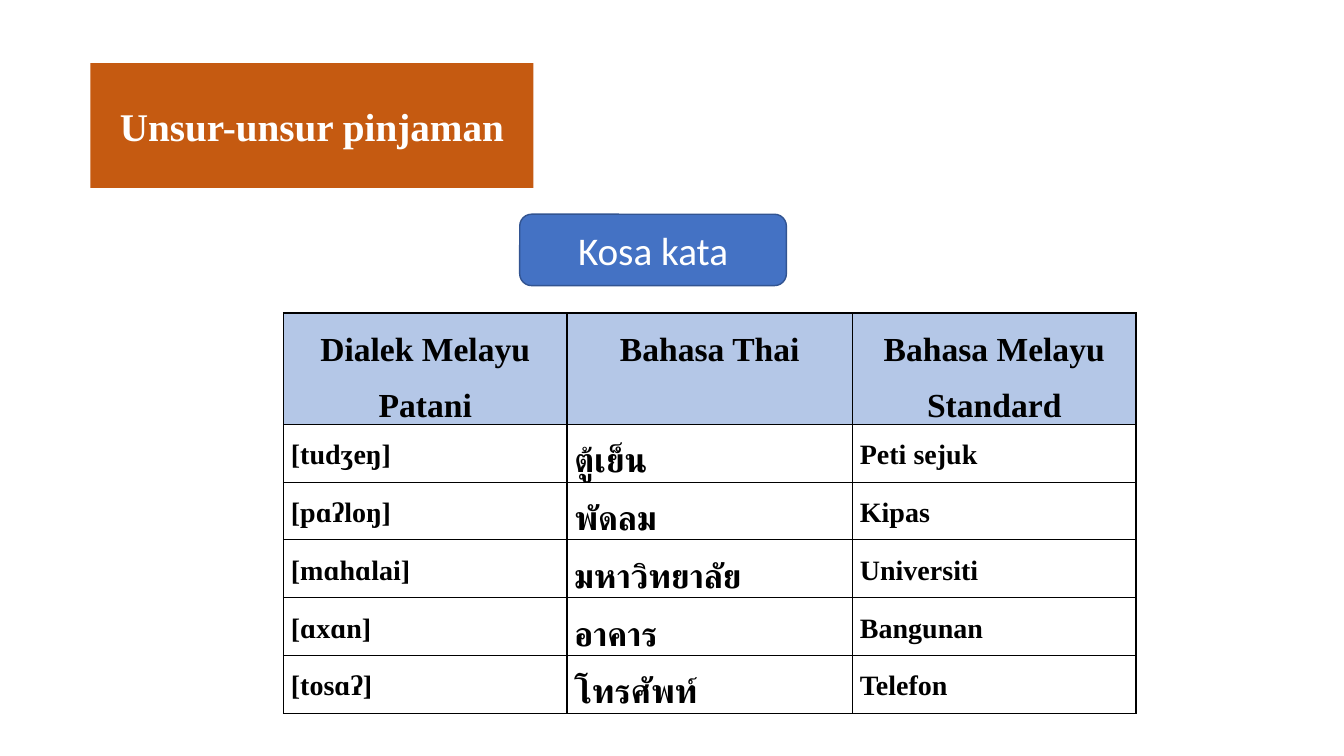
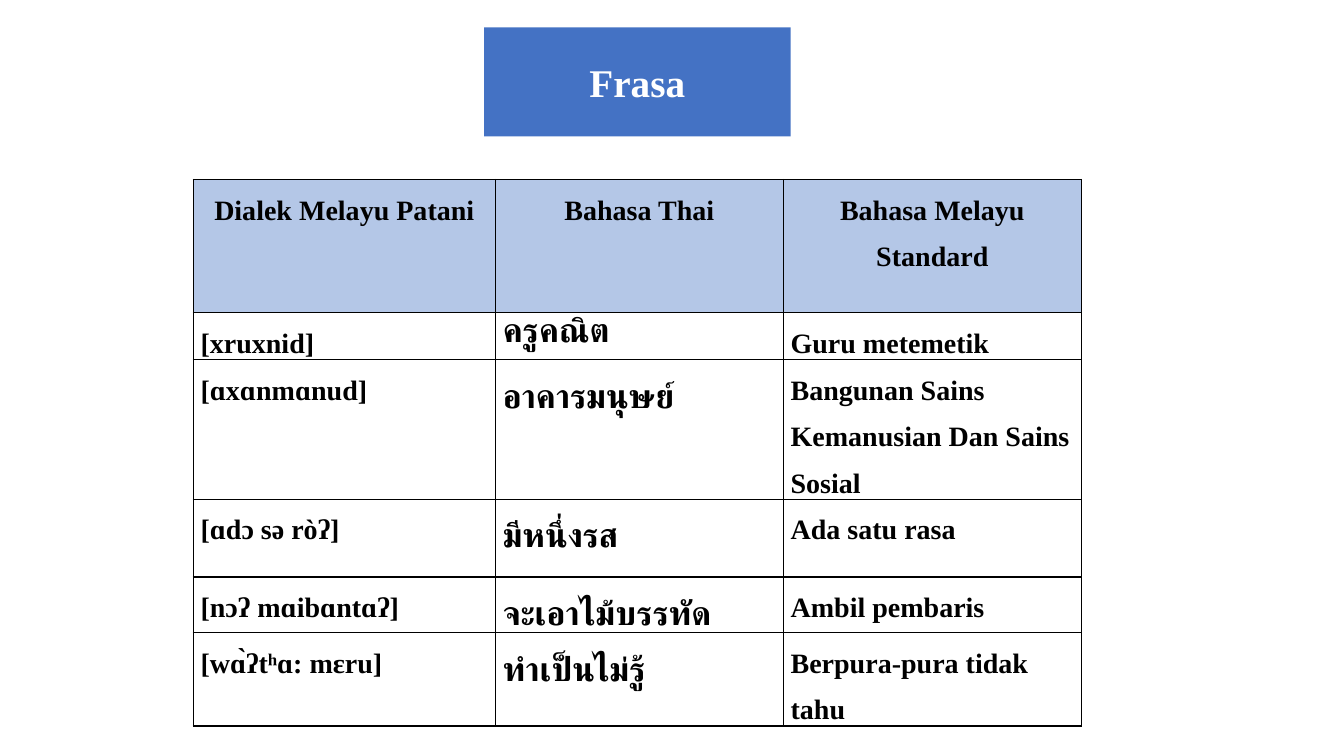
from dataclasses import dataclass

from lxml import etree
from pptx import Presentation
from pptx import util as u
from pptx.dml.color import RGBColor
from pptx.enum import shapes, text
from pptx.oxml import ns

PX = 9525  # EMU in one px, 96 px to the inch


@dataclass(frozen=True)
class Theme:
    orange: str = "C55A11"
    blue: str = "4472C4"
    blue_edge: str = "325491"
    header_fill: str = "B4C7E7"
    ink: str = "000000"
    white: str = "FFFFFF"
    serif: str = "Times New Roman"
    sans: str = "Calibri"
    label_size: int = 28
    thai_size: int = 24
    entry_size: int = 20
    rule_width: int = 1


THEME = Theme()
THAI_COLUMN = 1
HEADINGS = ("Dialek Melayu Patani", "Bahasa Thai", "Bahasa Melayu Standard")


def px(*lengths):
    return [u.Emu(length * PX) for length in lengths]


def apply(target, values):
    """Set every attribute named in a dict of format values."""
    for name, value in values.items():
        setattr(target, name, value)


def write(frame, words, size, color, face=THEME.serif, bold=True, **layout):
    """Put one formatted run into a text frame."""
    paragraph = frame.paragraphs[0]
    apply(paragraph, layout)
    run = paragraph.add_run()
    run.text = words
    apply(run.font, {"name": face, "size": u.Pt(size), "bold": bold})
    run.font.color.rgb = RGBColor.from_string(color)
    # Thai letters use the complex-script font
    script = etree.SubElement(run.font._element, ns.qn("a:cs"))
    script.set("typeface", face)


def paint_label(label, words, fill, **font):
    """Fill a label and centre its words."""
    label.fill.solid()
    label.fill.fore_color.rgb = RGBColor.from_string(fill)
    apply(label.text_frame, {
        "word_wrap": True,
        "auto_size": text.MSO_AUTO_SIZE.NONE,
        "vertical_anchor": text.MSO_ANCHOR.MIDDLE,
    })
    write(label.text_frame, words, THEME.label_size, THEME.white,
          alignment=text.PP_ALIGN.CENTER, **font)


def title_label(slide, box, words, fill, outline="rect"):
    """Slide title, as a filled label with the given outline."""
    title = slide.shapes.title
    apply(title, dict(zip(("left", "top", "width", "height"), px(*box))))
    geometry = etree.Element(ns.qn("a:prstGeom"), prst=outline)
    etree.SubElement(geometry, ns.qn("a:avLst"))
    title._element.spPr.insert(1, geometry)
    paint_label(title, words, fill)


def topic_label(slide, box, words):
    """Rounded, outlined label above a table."""
    topic = slide.shapes.add_shape(shapes.MSO_SHAPE.ROUNDED_RECTANGLE, *px(*box))
    topic.shadow.inherit = False
    topic.line.color.rgb = RGBColor.from_string(THEME.blue_edge)
    topic.line.width = u.Pt(THEME.rule_width)
    paint_label(topic, words, THEME.blue, face=THEME.sans, bold=False)


def rule_cell(cell):
    """Draw the four borders of a cell."""
    properties = cell._tc.get_or_add_tcPr()
    for side in ("lnL", "lnR", "lnT", "lnB"):
        border = etree.SubElement(properties, ns.qn(f"a:{side}"),
                                  w=str(u.Pt(THEME.rule_width)))
        fill = etree.SubElement(border, ns.qn("a:solidFill"))
        etree.SubElement(fill, ns.qn("a:srgbClr"), val=THEME.ink)


def loanword_table(slide, corner, widths, heights, entries, heading_size,
                   entry_layout, single_spaced=()):
    """Three-language table, with its rows and columns placed from a corner."""
    table = slide.shapes.add_table(
        len(heights), len(widths), *px(*corner, sum(widths), sum(heights))).table
    apply(table, {"first_row": False, "horz_banding": False})
    for column, width in zip(table.columns, px(*widths)):
        column.width = width
    for row, height in zip(table.rows, px(*heights)):
        row.height = height

    for r, words_in_row in enumerate((HEADINGS, *entries)):
        for c, words in enumerate(words_in_row):
            cell = table.cell(r, c)
            apply(cell, dict(zip(
                ("margin_left", "margin_top", "margin_right", "margin_bottom"),
                px(7, 0, 7, 0))))
            rule_cell(cell)
            if r == 0:
                cell.fill.solid()
                cell.fill.fore_color.rgb = RGBColor.from_string(THEME.header_fill)
                size = heading_size
                layout = {"alignment": text.PP_ALIGN.CENTER, "line_spacing": 1.5}
            else:
                cell.fill.background()
                size = THEME.thai_size if c == THAI_COLUMN else THEME.entry_size
                layout = {} if (r, c) in single_spaced else entry_layout
            write(cell.text_frame, words, size, THEME.ink, **layout)


def vocabulary_slide(slide):
    title_label(slide, (86, 60, 422, 119), "Unsur-unsur pinjaman", THEME.orange)
    topic_label(slide, (495, 204, 254, 68), "Kosa kata")
    entries = (
        ("[tudʒeŋ]", "ตู้เย็น", "Peti sejuk"),
        ("[pɑʔloŋ]", "พัดลม", "Kipas"),
        ("[mɑhɑlai]", "มหาวิทยาลัย", "Universiti"),
        ("[ɑxɑn]", "อาคาร", "Bangunan"),
        ("[tosɑʔ]", "โทรศัพท์", "Telefon"),
    )
    loanword_table(slide, (270, 298), (270, 272, 270), (85, *[55] * len(entries)),
                   entries, heading_size=24, entry_layout={"line_spacing": 1.5})


def phrase_slide(slide):
    title_label(slide, (461, 26, 292, 104), "Frasa", THEME.blue, "roundRect")
    entries = (
        ("[xruxnid]", "ครูคณิต", "Guru metemetik"),
        ("[ɑxɑnmɑnud]", "อาคารมนุษย์",
         "Bangunan Sains Kemanusian Dan Sains Sosial"),
        ("[ɑdɔ sə ròʔ]", "มีหนึ่งรส", "Ada satu rasa"),
        ("[nɔʔ mɑibɑntɑʔ]", "จะเอาไม้บรรทัด", "Ambil pembaris"),
        ("[wɑ̀ʔtʰɑ: mɛru]", "ทำเป็นไม่รู้", "Berpura-pura tidak tahu"),
    )
    loanword_table(slide, (184, 171), (288, 274, 284), (127, 32, 103, 74, 43, 40),
                   entries, heading_size=20,
                   entry_layout={"line_spacing": 1.5, "space_after": u.Pt(8)},
                   single_spaced={(1, THAI_COLUMN)})


def main():
    deck = Presentation()
    apply(deck, dict(zip(("slide_width", "slide_height"), px(1280, 720))))
    title_only = deck.slide_layouts[5]
    for build in (vocabulary_slide, phrase_slide):
        build(deck.slides.add_slide(title_only))
    deck.save("out.pptx")


if __name__ == "__main__":
    main()
